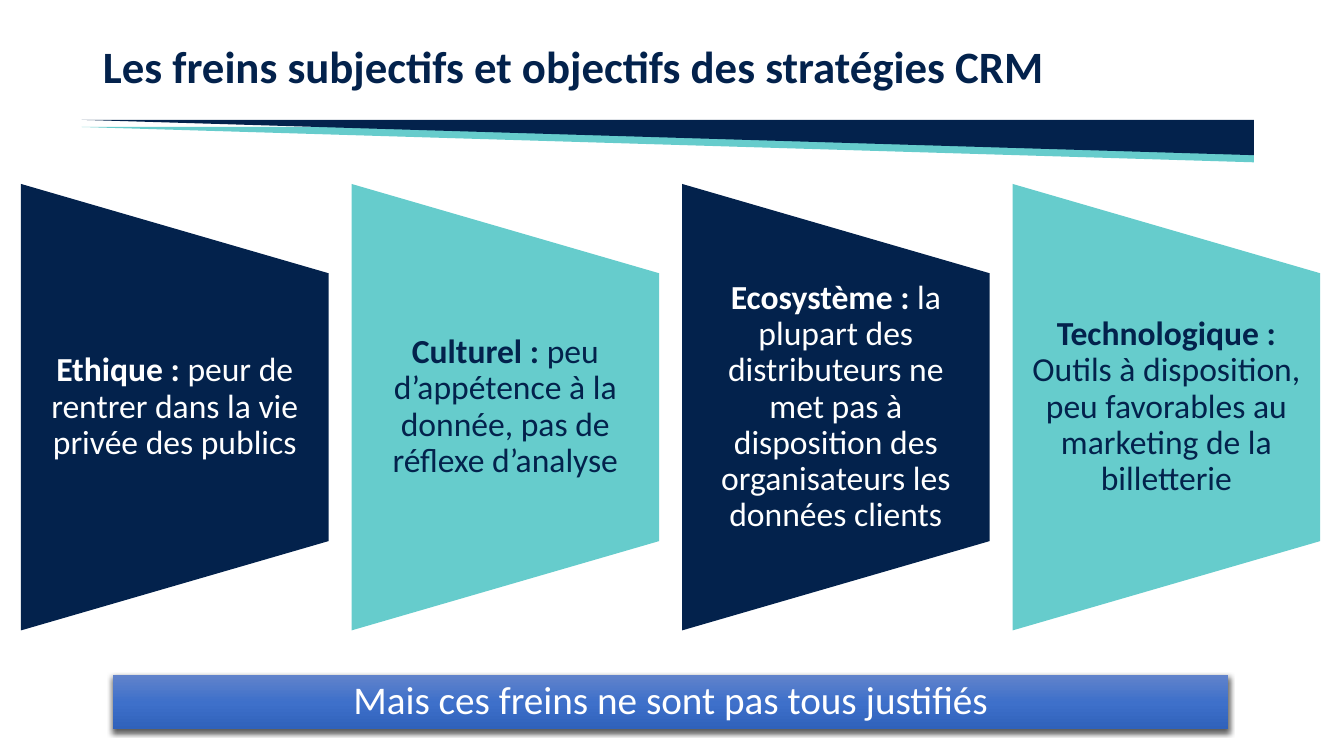
import copy

import pptx
import pptx.dml.color
import pptx.enum.shapes
import pptx.enum.text
import pptx.oxml
import pptx.oxml.ns
import pptx.util

Cm, Pt = pptx.util.Cm, pptx.util.Pt
SHAPES = pptx.enum.shapes.MSO_SHAPE
ALIGN = pptx.enum.text.PP_ALIGN
ANCHOR = pptx.enum.text.MSO_ANCHOR

COLOURS = {
    "navy": "03224C",
    "teal": "66CCCC",
    "white": "FFFFFF",
    "blue_top": "6183CB",
    "blue_mid": "3E70CA",
    "blue_low": "3062BB",
}

SHADOW = (
    '<a:outerShdw %s blurRad="57150" dist="19050" dir="5400000" algn="ctr" rotWithShape="0">'
    '<a:srgbClr val="000000"><a:alpha val="63000"/></a:srgbClr></a:outerShdw>'
    % pptx.oxml.ns.nsdecls("a")
)


def colour(name):
    return pptx.dml.color.RGBColor.from_string(COLOURS[name])


class BrakesSlide:
    font_name = "Calibri"

    def __init__(self, deck):
        self.slide = deck.slides.add_slide(deck.slide_layouts[5])

    def style(self, paragraph, size, ink, align, bold=None):
        paragraph.alignment = align
        paragraph.line_spacing = 0.9
        paragraph.font.name = self.font_name
        paragraph.font.size = Pt(size)
        paragraph.font.bold = bold
        paragraph.font.color.rgb = colour(ink)

    def title(self, wording, left, top, width, height):
        heading = self.slide.shapes.title
        heading.left, heading.top = Cm(left), Cm(top)
        heading.width, heading.height = Cm(width), Cm(height)
        frame = heading.text_frame
        frame.text = wording
        frame.word_wrap = True
        frame.auto_size = pptx.enum.text.MSO_AUTO_SIZE.NONE
        frame.vertical_anchor = ANCHOR.MIDDLE
        frame.margin_bottom = Cm(1.37)  # lifts the line above the wedge
        self.style(frame.paragraphs[0], 32, "navy", ALIGN.LEFT, bold=True)

    def shape(self, kind, left, top, width, height, fill=None, rotation=0):
        outline = self.slide.shapes.add_shape(kind, Cm(left), Cm(top), Cm(width), Cm(height))
        outline.rotation = rotation
        outline.line.fill.background()
        outline.shadow.inherit = False
        if fill:
            outline.fill.solid()
            outline.fill.fore_color.rgb = colour(fill)
        return outline

    def label(self, heading, detail, ink, left, top, width, height):
        box = self.slide.shapes.add_textbox(Cm(left), Cm(top), Cm(width), Cm(height))
        frame = box.text_frame
        frame.word_wrap = True
        frame.vertical_anchor = ANCHOR.MIDDLE
        frame.margin_left = frame.margin_right = Cm(0.43)
        frame.margin_top = frame.margin_bottom = 0
        paragraph = frame.paragraphs[0]
        self.style(paragraph, 24, ink, ALIGN.CENTER)
        for wording, bold in ((heading + "\u00a0: ", True), (detail, False)):
            run = paragraph.add_run()
            run.text = wording
            run.font.bold = bold

    def banner(self, wording, left, top, width, height):
        bar = self.shape(SHAPES.RECTANGLE, left, top, width, height)
        # Three-stop vertical gradient
        bar.fill.gradient()
        bar.fill.gradient_angle = 270
        stop_list = bar.element.spPr.find(".//" + pptx.oxml.ns.qn("a:gsLst"))
        stop_list.append(copy.deepcopy(stop_list[-1]))
        shades = ((0, "blue_top"), (0.5, "blue_mid"), (1, "blue_low"))
        for stop, (position, shade) in zip(bar.fill.gradient_stops, shades):
            stop.position = position
            stop.color.rgb = colour(shade)
        # Soft shadow under the bar
        effects = bar.element.spPr.find(pptx.oxml.ns.qn("a:effectLst"))
        effects.append(pptx.oxml.parse_xml(SHADOW))
        frame = bar.text_frame
        frame.text = wording
        frame.word_wrap = True
        frame.vertical_anchor = ANCHOR.MIDDLE
        paragraph = frame.paragraphs[0]
        self.style(paragraph, 28, "white", ALIGN.CENTER)
        paragraph.space_before = Pt(10)


BRAKES = [
    ("Ethique", "peur de rentrer dans la vie privée des publics"),
    ("Culturel", "peu d’appétence à la donnée, pas de réflexe d’analyse"),
    ("Ecosystème", "la plupart des distributeurs ne met pas à disposition "
                   "des organisateurs les données clients"),
    ("Technologique", "Outils à disposition, peu favorables au marketing de la billetterie"),
]


def main():
    deck = pptx.Presentation()
    deck.slide_width, deck.slide_height = Cm(33.87), Cm(19.05)
    page = BrakesSlide(deck)

    # Title and the double wedge beneath it
    page.title("Les freins subjectifs et objectifs des stratégies CRM", 2.34, 0.51, 29.21, 3.68)
    for top, fill in ((3.2, "teal"), (3.02, "navy")):
        page.shape(SHAPES.RIGHT_TRIANGLE, 2.06, top, 29.54, 0.89, fill, rotation=180)

    # Four brakes: trapezoids turned on their side, at an equal pitch
    first_left, pitch, middle = 0.53, 8.33, 10.26
    panel_width, panel_height, label_height = 7.75, 11.25, 6.76
    for index, (heading, detail) in enumerate(BRAKES):
        left = first_left + index * pitch
        fill, ink = (("navy", "white"), ("teal", "navy"))[index % 2]
        page.shape(SHAPES.FLOWCHART_MANUAL_OPERATION,
                   left - (panel_height - panel_width) / 2, middle - panel_width / 2,
                   panel_height, panel_width, fill, rotation=270)
        page.label(heading, detail, ink, left, middle - label_height / 2,
                   panel_width, label_height)

    # Conclusion
    page.banner("Mais ces freins ne sont pas tous justifiés", 2.84, 17.02, 28.12, 1.35)

    deck.save("out.pptx")


if __name__ == "__main__":
    main()
